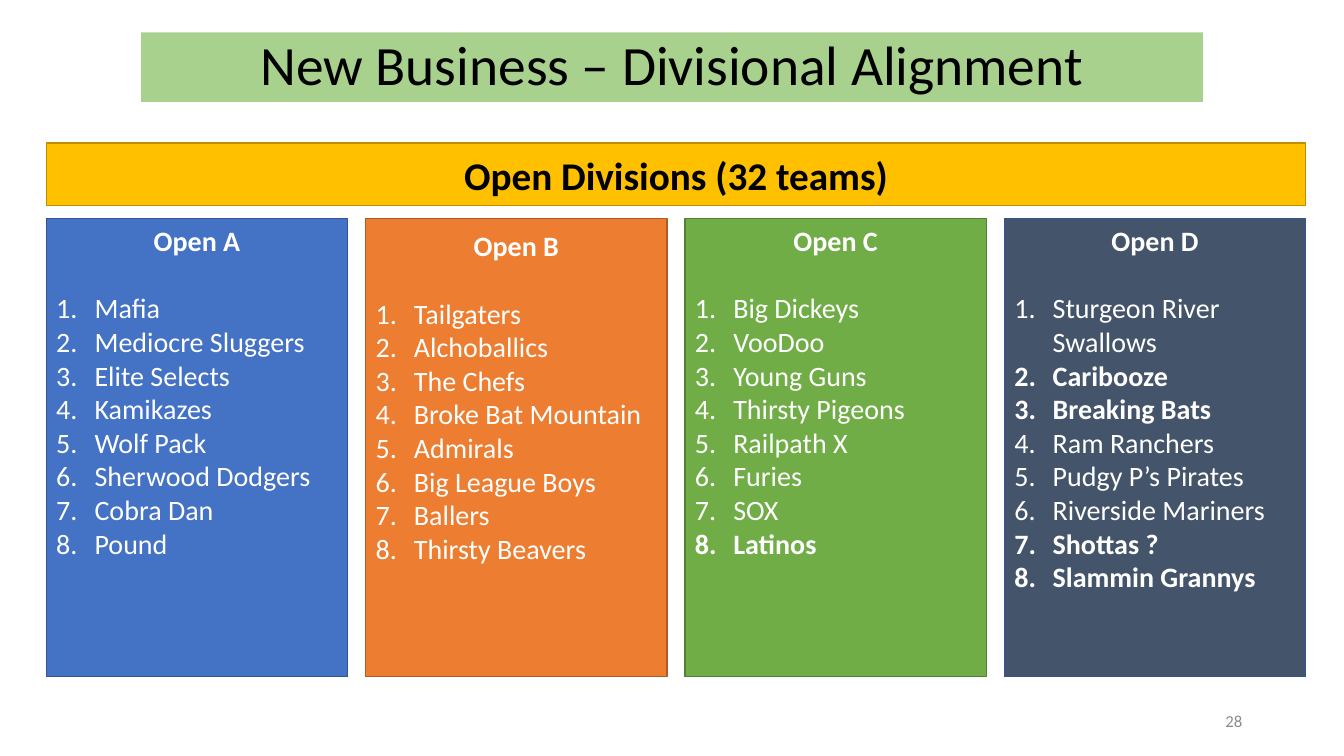
from pptx import Presentation
from pptx import util as u
from pptx.dml.color import RGBColor
from pptx.enum import shapes, text
from lxml import etree

NS = "http://schemas.openxmlformats.org/drawingml/2006/main"
WIDE, HIGH = 13.33, 7.5
LEFT, SPAN, GAP = 3.45, 93.7, 1.35
MID, TOP = text.MSO_ANCHOR.MIDDLE, text.MSO_ANCHOR.TOP
MIDDLE, RIGHT, START = text.PP_ALIGN.CENTER, text.PP_ALIGN.RIGHT, text.PP_ALIGN.LEFT


def tint(code):
    """Turn a hex string into a colour."""
    return RGBColor.from_string(code)


class Deck:
    """Holds the style and current slide; lengths are percent of the slide."""

    def __init__(self, font="Calibri"):
        """Open a deck with one blank slide."""
        self.font = font
        self.file = Presentation()
        self.file.slide_width = u.Inches(WIDE)
        self.file.slide_height = u.Inches(HIGH)
        self.slide = self.file.slides.add_slide(self.file.slide_layouts[6])

    def area(self, x, y, w, h):
        """Convert percentages into slide lengths."""
        return [u.Inches(n * side / 100)
                for n, side in zip((x, y, w, h), (WIDE, HIGH, WIDE, HIGH))]

    def style(self, para, size, color, bold=False, align=MIDDLE):
        """Format one paragraph and its runs."""
        para.alignment = align
        for run in para.runs:
            run.font.name = self.font
            run.font.size = u.Pt(size)
            run.font.bold = bold
            run.font.color.rgb = tint(color)

    def box(self, area, fill, line=None):
        """Draw a filled rectangle and return its text frame."""
        shape = self.slide.shapes.add_shape(
            shapes.MSO_SHAPE.RECTANGLE, *self.area(*area))
        shape.shadow.inherit = False
        shape.fill.solid()
        shape.fill.fore_color.rgb = tint(fill)
        if line:
            shape.line.color.rgb = tint(line)
            shape.line.width = u.Pt(1)
        else:
            shape.line.fill.background()
        shape.text_frame.word_wrap = True
        return shape.text_frame

    def banner(self, words, area, fill, size, line=None, bold=False):
        """Draw a bar with one centred line."""
        frame = self.box(area, fill, line)
        frame.vertical_anchor = MID
        para = frame.paragraphs[0]
        para.text = words
        para.line_spacing = 1.0 if line else 0.9
        self.style(para, size, "000000", bold)

    def panel(self, col, name, teams, fill, line, strong=(), inset=0.05):
        """Draw a division's panel with its numbered teams."""
        w = (SPAN - 3 * GAP) / 4
        frame = self.box((LEFT + col * (w + GAP), 28.93, w, 60.53), fill, line)
        frame.vertical_anchor = TOP
        frame.margin_top = u.Inches(inset)
        head = frame.paragraphs[0]
        head.text = name
        head.space_after = u.Pt(24)
        self.style(head, 20, "FFFFFF", True)
        for team in teams:
            para = frame.add_paragraph()
            para.text = team
            self.style(para, 20, "FFFFFF", team in strong, START)
            props = para._p.get_or_add_pPr()
            props.set("marL", str(u.Inches(0.38)))
            props.set("indent", str(-u.Inches(0.38)))
            etree.SubElement(props, f"{{{NS}}}buAutoNum", type="arabicPeriod")

    def number(self, words, area):
        """Write the slide number."""
        frame = self.slide.shapes.add_textbox(*self.area(*area)).text_frame
        frame.word_wrap = True
        frame.vertical_anchor = MID
        frame.text = words
        self.style(frame.paragraphs[0], 12, "8C8C8C", align=RIGHT)


def main():
    """Build and save the slide."""
    deck = Deck()
    deck.banner("New Business – Divisional Alignment",
                (10.5, 4.27, 79, 9.2), "A9D18E", 39.6)
    deck.number("28", (70.67, 92.67, 22.5, 5.33))
    deck.panel(0, "Open A",
               ["Mafia", "Mediocre Sluggers", "Elite Selects", "Kamikazes",
                "Wolf Pack", "Sherwood Dodgers", "Cobra Dan", "Pound"],
               "4472C4", "325491")
    deck.panel(1, "Open B",
               ["Tailgaters", "Alchoballics", "The Chefs",
                "Broke Bat Mountain", "Admirals", "Big League Boys",
                "Ballers", "Thirsty Beavers"],
               "ED7D31", "AF5C24", inset=0.1)
    deck.panel(2, "Open C",
               ["Big Dickeys", "VooDoo", "Young Guns", "Thirsty Pigeons",
                "Railpath X", "Furies", "SOX", "Latinos"],
               "70AD47", "538035", ["Latinos"])
    deck.panel(3, "Open D",
               ["Sturgeon River Swallows", "Caribooze", "Breaking Bats",
                "Ram Ranchers", "Pudgy P’s Pirates", "Riverside Mariners",
                "Shottas ?", "Slammin Grannys"],
               "44546A", "325491",
               ["Caribooze", "Breaking Bats", "Shottas ?", "Slammin Grannys"])
    deck.banner("Open Divisions (32 teams)", (LEFT, 18.93, SPAN, 8.27),
                "FFC000", 28, "BD8E00", True)
    deck.file.save("out.pptx")


if __name__ == "__main__":
    main()
